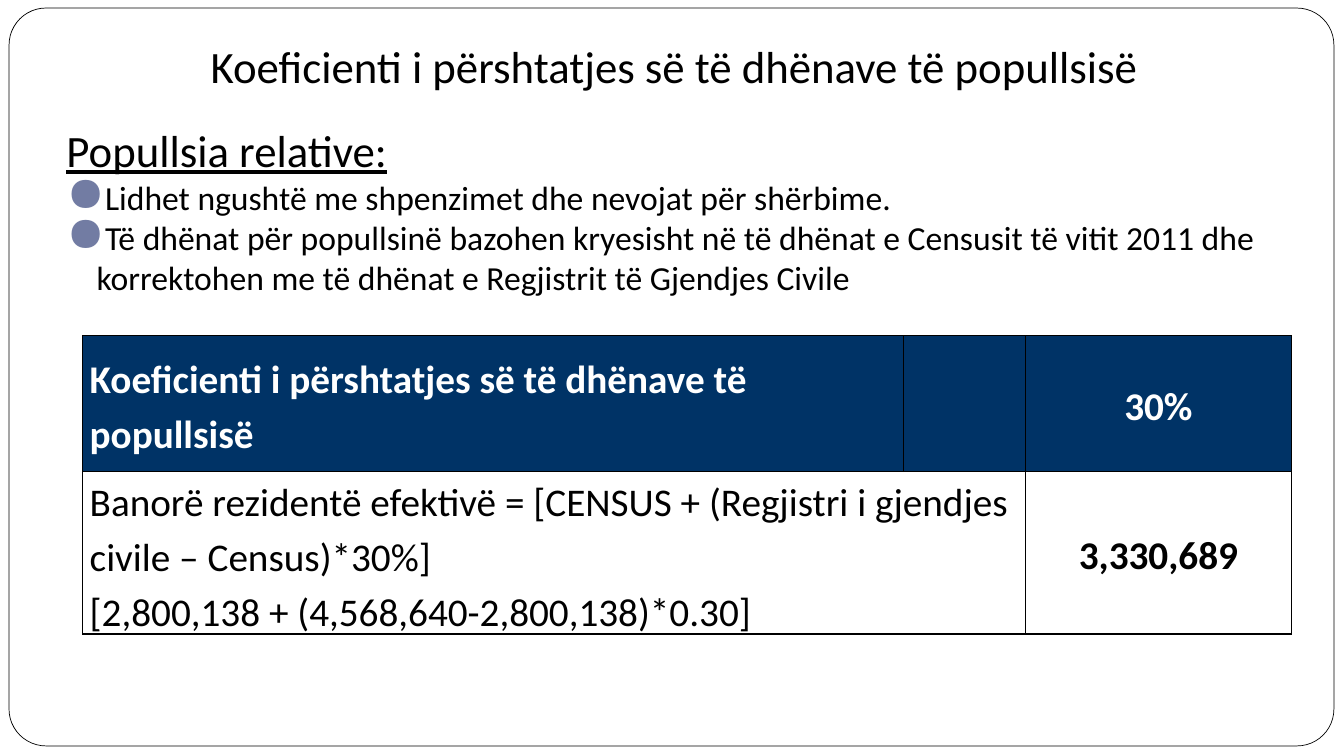
from lxml import etree
from pptx import Presentation, util as u
from pptx.dml.color import RGBColor
from pptx.enum import shapes, text
from pptx.oxml.ns import qn

FONT = "Calibri"
BLACK, WHITE, NAVY, BULLET = "000000", "FFFFFF", "003366", "727CA3"
NO_STYLE = "{2D5ABB26-0587-4C30-8999-92F81FD0307C}"
LEFT, CENTER = text.PP_ALIGN.LEFT, text.PP_ALIGN.CENTER

TITLE = "Koeficienti i përshtatjes së të dhënave të popullsisë"
HEADING = "Popullsia relative:"
POINTS = [
    "Lidhet ngushtë me shpenzimet dhe nevojat për shërbime.",
    "Të dhënat për popullsinë bazohen kryesisht në të dhënat e Censusit të vitit 2011 "
    "dhe korrektohen me të dhënat e Regjistrit të Gjendjes Civile",
]
COLS = [8.14, 1.21, 2.64]
ROWS = [1.35, 1.61]
CELLS = [
    {"lines": [TITLE], "at": (0, 0), "color": WHITE, "bold": True, "align": LEFT},
    {"lines": ["30%"], "at": (0, 2), "color": WHITE, "bold": True, "align": CENTER},
    {"lines": ["Banorë rezidentë efektivë = [CENSUS + (Regjistri i gjendjes civile – Census)*30%]",
               "[2,800,138 + (4,568,640-2,800,138)*0.30]"],
     "at": (1, 0), "color": BLACK, "bold": False, "align": LEFT},
    {"lines": ["3,330,689"], "at": (1, 2), "color": BLACK, "bold": True, "align": CENTER},
]


def rgb(value):
    return RGBColor.from_string(value)


def add_run(p, words, size, color=BLACK, bold=False, underline=False):
    r = p.add_run()
    r.text = words
    f = r.font
    f.name, f.size, f.bold, f.underline = FONT, u.Pt(size), bold, underline
    f.color.rgb = rgb(color)


def add_bullet(p):
    pPr = p._p.get_or_add_pPr()
    pPr.set("marL", str(u.Inches(0.3)))
    pPr.set("indent", str(-u.Inches(0.3)))
    color = etree.SubElement(pPr, qn("a:buClr"))
    etree.SubElement(color, qn("a:srgbClr"), val=BULLET)
    etree.SubElement(pPr, qn("a:buSzPct"), val="145000")
    etree.SubElement(pPr, qn("a:buChar"), char="●")


def add_borders(cell):
    tcPr = cell._tc.get_or_add_tcPr()
    for side in ("lnL", "lnR", "lnT", "lnB"):
        ln = etree.SubElement(tcPr, qn(f"a:{side}"), w=str(u.Pt(1)))
        fill = etree.SubElement(ln, qn("a:solidFill"))
        etree.SubElement(fill, qn("a:srgbClr"), val=BLACK)


def add_text_box(s, left, top, width, height, anchor):
    box = s.shapes.add_textbox(*map(u.Inches, (left, top, width, height)))
    tf = box.text_frame
    tf.word_wrap = True
    tf.vertical_anchor = anchor
    return tf


def add_frame(s):
    sp = s.shapes.add_shape(shapes.MSO_SHAPE.ROUNDED_RECTANGLE,
                            *map(u.Inches, (0.09, 0.08, 13.14, 7.32)))
    sp.adjustments[0] = 0.05
    sp.shadow.inherit = False
    sp.fill.solid()
    sp.fill.fore_color.rgb = rgb(WHITE)
    sp.line.color.rgb = rgb(BLACK)
    sp.line.width = u.Pt(0.5)


def add_table(s):
    frame = s.shapes.add_table(len(ROWS), len(COLS),
                               *map(u.Inches, (0.82, 3.33, sum(COLS), sum(ROWS))))
    table = frame.table
    table._tbl.tblPr.find(qn("a:tableStyleId")).text = NO_STYLE
    for col, width in zip(table.columns, COLS):
        col.width = u.Inches(width)
    for row, height, color in zip(table.rows, ROWS, (NAVY, WHITE)):
        row.height = u.Inches(height)
        for cell in row.cells:
            add_borders(cell)
            cell.fill.solid()
            cell.fill.fore_color.rgb = rgb(color)
    table.cell(1, 0).merge(table.cell(1, 1))
    for item in CELLS:
        cell = table.cell(*item["at"])
        cell.vertical_anchor = text.MSO_ANCHOR.MIDDLE
        cell.margin_left = cell.margin_right = u.Inches(0.07)
        cell.margin_top = cell.margin_bottom = 0
        tf = cell.text_frame
        for i, line in enumerate(item["lines"]):
            p = tf.add_paragraph() if i else tf.paragraphs[0]
            p.alignment = item["align"]
            p.line_spacing = 1.15
            add_run(p, line, 28, item["color"], item["bold"])


def main():
    prs = Presentation()
    prs.slide_width, prs.slide_height = u.Inches(13.33), u.Inches(7.5)
    s = prs.slides.add_slide(prs.slide_layouts[6])
    add_frame(s)

    tf = add_text_box(s, 0.82, 0.24, 11.74, 0.78, text.MSO_ANCHOR.BOTTOM)
    tf.margin_bottom = u.Inches(0.1)
    tf.paragraphs[0].alignment = CENTER
    add_run(tf.paragraphs[0], TITLE, 32)

    tf = add_text_box(s, 0.56, 1.17, 12.42, 5.92, text.MSO_ANCHOR.TOP)
    add_run(tf.paragraphs[0], HEADING, 32, underline=True)
    for point in POINTS:
        p = tf.add_paragraph()
        add_bullet(p)
        add_run(p, point, 24)

    add_table(s)
    prs.save("out.pptx")


if __name__ == "__main__":
    main()
